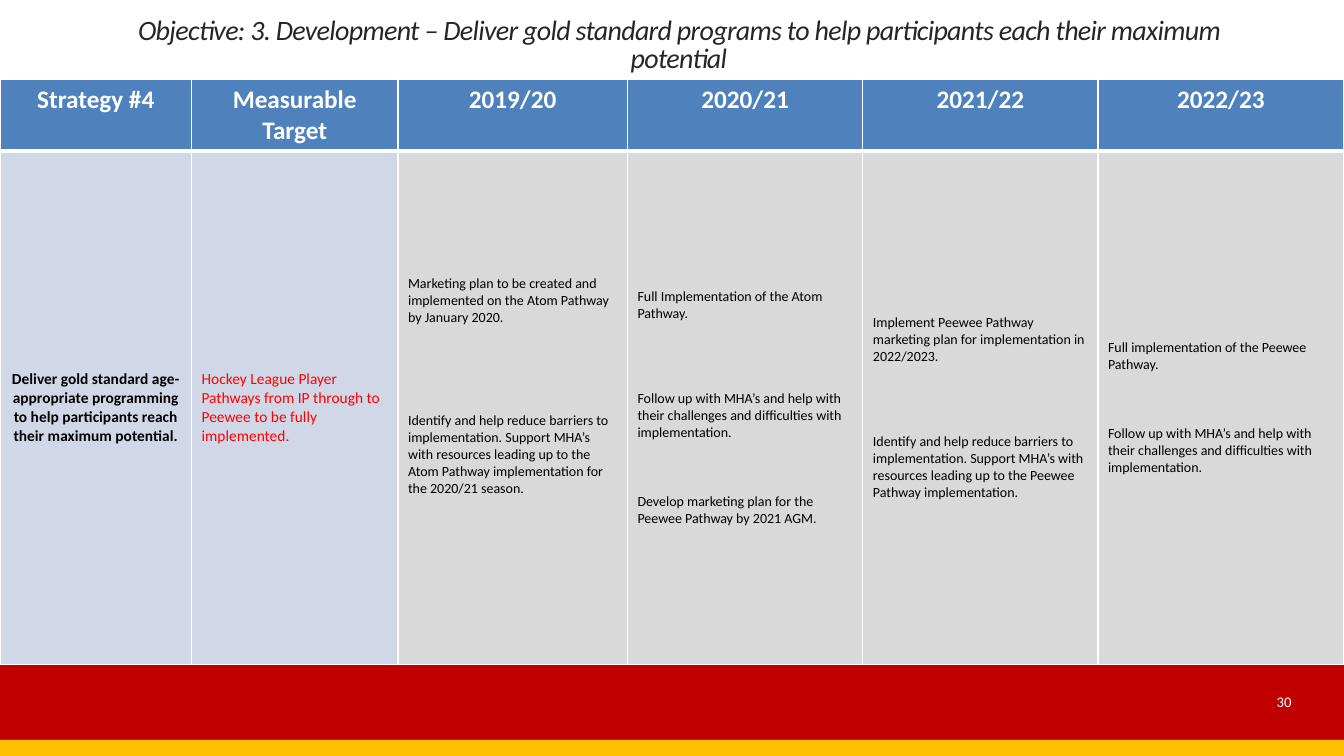
from lxml import etree
from pptx import Presentation
from pptx.dml.color import RGBColor
from pptx.enum.shapes import MSO_SHAPE
from pptx.enum.text import MSO_ANCHOR, PP_ALIGN
from pptx.oxml.ns import qn
from pptx.util import Pt

RECT = MSO_SHAPE.RECTANGLE
TOP, MIDDLE, BOTTOM = MSO_ANCHOR.TOP, MSO_ANCHOR.MIDDLE, MSO_ANCHOR.BOTTOM
LEFT, CENTER, RIGHT = PP_ALIGN.LEFT, PP_ALIGN.CENTER, PP_ALIGN.RIGHT
WHITE = RGBColor(0xFF, 0xFF, 0xFF)
BLACK = RGBColor(0, 0, 0)
INK = RGBColor(0x26, 0x26, 0x26)
RED = RGBColor(0xFF, 0, 0)
MAROON = RGBColor(0xC0, 0, 0)
GOLD = RGBColor(0xFF, 0xC0, 0)
BLUE = RGBColor(0x4F, 0x81, 0xBD)
PALE = RGBColor(0xD0, 0xD8, 0xE8)
GRAY = RGBColor(0xD9, 0xD9, 0xD9)
FONT = "Calibri"
LINE = 12.2

WIDTHS = [136.8, 147.5, 163.9, 168.2, 167.9, 175.7]
HEADS = ["Strategy #4", "Measurable Target", "2019/20", "2020/21", "2021/22", "2022/23"]
GOAL = "Deliver gold standard age-appropriate programming to help participants reach their maximum potential."
TARGET = "Hockey League Player Pathways from IP through to Peewee to be fully implemented."
FOLLOW = "Follow up with MHA’s and help with their challenges and difficulties with implementation."
REDUCE = "Identify and help reduce barriers to implementation. Support MHA’s with resources leading up to the "
YEARS = [
    [(0, "Marketing plan to be created and implemented on the Atom Pathway by January 2020."),
     (5, REDUCE + "Atom Pathway implementation for the 2020/21 season.")],
    [(0, "Full Implementation of the Atom Pathway."), (4, FOLLOW),
     (3, "Develop marketing plan for the Peewee Pathway by 2021 AGM.")],
    [(0, "Implement Peewee Pathway marketing plan for implementation in 2022/2023."),
     (4, REDUCE + "Peewee Pathway implementation.")],
    [(0, "Full implementation of the Peewee Pathway."), (3, FOLLOW)],
]


def add_run(para, text, size, color, bold=False, italic=False):
    """Add one styled run to a paragraph and return it."""
    run = para.add_run()
    run.text = text
    font = run.font
    font.name, font.size, font.bold, font.italic = FONT, Pt(size), bold, italic
    font.color.rgb = color
    return run


def add_band(slide, top, height, color):
    """Draw a full-width footer band."""
    band = slide.shapes.add_shape(RECT, 0, Pt(top), Pt(960), Pt(height))
    band.shadow.inherit = False
    band.fill.solid()
    band.fill.fore_color.rgb = color
    band.line.fill.background()


def add_label(slide, box, anchor, align):
    """Add a wrapped text box and return its paragraph."""
    frame = slide.shapes.add_textbox(*map(Pt, box)).text_frame
    frame.word_wrap = True
    frame.vertical_anchor = anchor
    para = frame.paragraphs[0]
    para.alignment = align
    return para


def set_edge(cell, side, width):
    """Give one side of a cell a white border."""
    edge = etree.SubElement(cell._tc.get_or_add_tcPr(), qn("a:ln" + side), w=str(Pt(width)))
    fill = etree.SubElement(edge, qn("a:solidFill"))
    etree.SubElement(fill, qn("a:srgbClr"), val=str(WHITE))


def fill_cell(cell, items, size, color, back, heavy, align=LEFT, anchor=MIDDLE, bold=False):
    """Fill a cell with paragraphs, each after a gap in lines."""
    for side in "LRTB":
        set_edge(cell, side, 3 if side == heavy else 1)
    cell.fill.solid()
    cell.fill.fore_color.rgb = back
    cell.vertical_anchor = anchor
    frame = cell.text_frame
    for i, (gap, text) in enumerate(items):
        para = frame.add_paragraph() if i else frame.paragraphs[0]
        para.alignment = align
        if gap:
            para.space_before = Pt(gap * LINE)
        add_run(para, text, size, color, bold)


def add_plan(slide):
    """Add the strategy table."""
    table = slide.shapes.add_table(2, len(WIDTHS), 0, Pt(56.9), Pt(960), Pt(417.6)).table
    table.rows[0].height, table.rows[1].height = Pt(51), Pt(366.6)
    for col, width in enumerate(WIDTHS):
        table.columns[col].width = Pt(width)
        fill_cell(table.cell(0, col), [(0, HEADS[col])], 18, WHITE, BLUE, "B", CENTER, TOP, True)
    fill_cell(table.cell(1, 0), [(0, GOAL)], 11, BLACK, PALE, "T", CENTER, bold=True)
    fill_cell(table.cell(1, 1), [(0, TARGET)], 11, RED, PALE, "T")
    for col, items in enumerate(YEARS, 2):
        fill_cell(table.cell(1, col), items, 10, BLACK, GRAY, "T")
    first = table.cell(1, 2)
    first.vertical_anchor = TOP
    first.margin_top = Pt(3.6 + 7 * LINE)


def main():
    """Build and save the slide."""
    deck = Presentation()
    deck.slide_width, deck.slide_height = Pt(960), Pt(540)
    slide = deck.slides.add_slide(deck.slide_layouts[6])
    add_band(slide, 474.5, 54, MAROON)
    add_band(slide, 528.5, 11.5, GOLD)
    page = add_label(slide, (826.6, 486.7, 103, 28.8), MIDDLE, RIGHT)
    add_run(page, "30", 10.5, WHITE)
    add_plan(slide)
    title = add_label(slide, (81.4, 14.4, 807, 42.5), BOTTOM, CENTER)
    title.line_spacing = 0.85
    run = add_run(title, "Objective: 3. Development – Deliver gold standard programs to help "
                  "participants each their maximum potential", 20, INK, italic=True)
    run.font._element.set("spc", "-50")
    deck.save("out.pptx")


if __name__ == "__main__":
    main()
